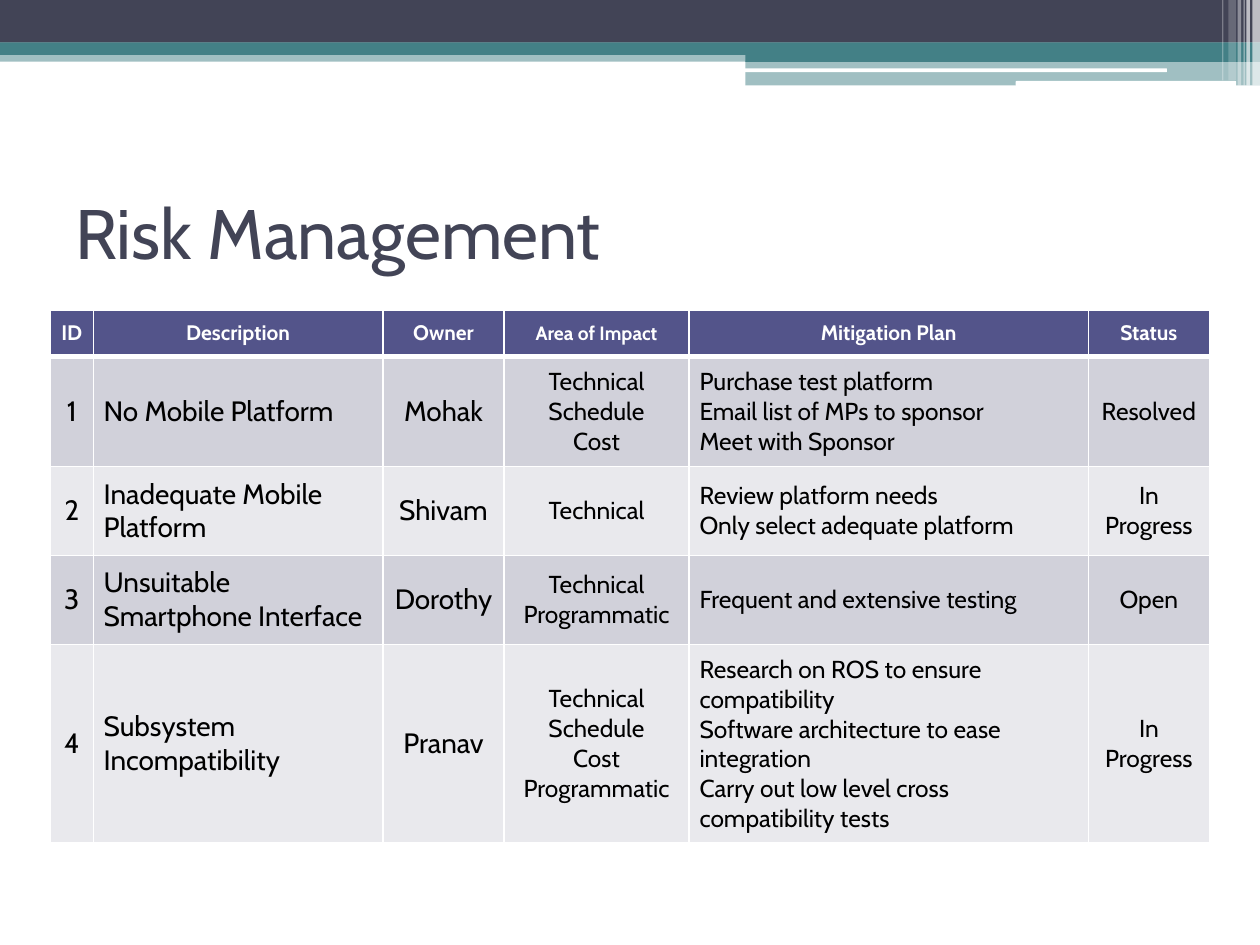
import dataclasses

import lxml.etree
import pptx
import pptx.dml.color
import pptx.enum.shapes
import pptx.enum.text
import pptx.oxml.ns
import pptx.util

Pt = pptx.util.Pt
SHAPE = pptx.enum.shapes.MSO_SHAPE
ALIGN = pptx.enum.text.PP_ALIGN
MIDDLE = pptx.enum.text.MSO_ANCHOR.MIDDLE
qn = pptx.oxml.ns.qn


@dataclasses.dataclass(frozen=True)
class Theme:
    font: str = "Cabin"
    navy: str = "424456"
    teal: str = "438086"
    white: str = "FFFFFF"
    black: str = "000000"
    header: str = "53548A"
    bands: tuple = ("D1D1DA", "E9E9ED")
    title_size: int = 40
    header_size: int = 12
    narrow_size: int = 11
    large_size: int = 16
    body_size: int = 14


def rgb(color):
    return pptx.dml.color.RGBColor.from_string(color)


def write(tf, text, *, font, size, color, bold=False, align=ALIGN.LEFT):
    tf.word_wrap = True
    tf.vertical_anchor = MIDDLE
    for i, line in enumerate(text.split("\n")):
        p = tf.paragraphs[0] if i == 0 else tf.add_paragraph()
        p.alignment = align
        r = p.add_run()
        r.text = line
        r.font.name = font
        r.font.size = Pt(size)
        r.font.bold = bold
        r.font.color.rgb = rgb(color)


class Deck:
    def __init__(self, slide, theme):
        self.s = slide
        self.theme = theme

    def bar(self, x, y, w, h, color, opacity=100, rounded=False):
        kind = SHAPE.ROUNDED_RECTANGLE if rounded else SHAPE.RECTANGLE
        sp = self.s.shapes.add_shape(kind, Pt(x), Pt(y), Pt(w), Pt(h))
        sp.shadow.inherit = False
        sp.line.fill.background()
        sp.fill.solid()
        sp.fill.fore_color.rgb = rgb(color)
        if opacity < 100:
            clr = sp.fill._xPr.find(qn("a:solidFill"))[0]
            lxml.etree.SubElement(clr, qn("a:alpha"), val=str(opacity * 1000))

    def title(self, text, x, y, w, h):
        sp = self.s.shapes.add_textbox(Pt(x), Pt(y), Pt(w), Pt(h))
        write(sp.text_frame, text, font=self.theme.font,
              size=self.theme.title_size, color=self.theme.navy)

    def border(self, cell, side, width):
        tag = qn(f"a:ln{side}")
        ln = lxml.etree.SubElement(cell._tc.get_or_add_tcPr(), tag, w=str(Pt(width)))
        fill = lxml.etree.SubElement(ln, qn("a:solidFill"))
        lxml.etree.SubElement(fill, qn("a:srgbClr"), val=self.theme.white)

    def cell(self, cell, text, fill, top, bottom, **fmt):
        for side, width in (("L", 1), ("R", 1), ("T", top), ("B", bottom)):
            self.border(cell, side, width)
        cell.fill.solid()
        cell.fill.fore_color.rgb = rgb(fill)
        cell.margin_left = cell.margin_right = Pt(6)
        cell.margin_top = cell.margin_bottom = Pt(6)
        cell.vertical_anchor = MIDDLE
        write(cell.text_frame, text, font=self.theme.font, **fmt)

    def table(self, x, y, widths, heights, header, rows):
        t = self.theme
        frame = self.s.shapes.add_table(len(heights), len(widths), Pt(x), Pt(y),
                                        Pt(sum(widths)), Pt(sum(heights)))
        table = frame.table
        for col, width in zip(table.columns, widths):
            col.width = Pt(width)
        for row, height in zip(table.rows, heights):
            row.height = Pt(height)
        for c, text in enumerate(header):
            size = t.narrow_size if text == "Area of Impact" else t.header_size
            self.cell(table.cell(0, c), text, t.header, 1, 3, size=size,
                      color=t.white, bold=True, align=ALIGN.CENTER)
        for r, row in enumerate(rows, 1):
            for c, text in enumerate(row):
                left = header[c] in ("Description", "Mitigation Plan")
                self.cell(table.cell(r, c), text, t.bands[(r - 1) % 2],
                          3 if r == 1 else 1, 1,
                          size=t.large_size if c < 3 else t.body_size,
                          color=t.black,
                          align=ALIGN.LEFT if left else ALIGN.CENTER)


HEADER = ("ID", "Description", "Owner", "Area of Impact", "Mitigation Plan", "Status")
RISKS = (
    ("1", "No Mobile Platform", "Mohak", "Technical Schedule\nCost",
     "Purchase test platform\nEmail list of MPs to sponsor\nMeet with Sponsor",
     "Resolved"),
    ("2", "Inadequate Mobile Platform", "Shivam", "Technical",
     "Review platform needs\nOnly select adequate platform", "In Progress"),
    ("3", "Unsuitable Smartphone Interface", "Dorothy", "Technical Programmatic",
     "Frequent and extensive testing", "Open"),
    ("4", "Subsystem Incompatibility", "Pranav",
     "Technical\nSchedule\nCost\nProgrammatic",
     "Research on ROS to ensure compatibility\n"
     "Software architecture to ease integration\n"
     "Carry out low level cross compatibility tests", "In Progress"),
)


def main():
    prs = pptx.Presentation()
    prs.slide_width, prs.slide_height = Pt(720), Pt(540)
    theme = Theme()
    deck = Deck(prs.slides.add_slide(prs.slide_layouts[6]), theme)

    deck.bar(0, 28.8, 720, 6.5, theme.teal, 50)
    deck.bar(0, 0, 720, 24.4, theme.navy)
    deck.bar(0, 24.2, 720, 7.2, theme.teal)
    deck.bar(426, 28.2, 294, 7.2, theme.teal)
    deck.bar(426, 34.6, 294, 14.2, theme.teal, 50)
    deck.bar(425.6, 39.1, 241.2, 2.2, theme.white, rounded=True)
    deck.bar(580.4, 46.3, 126, 2.9, theme.white, rounded=True)
    stripes = ((715.6, 4.4, 49, 65), (712.2, 2, 49, 65), (710.6, 0.7, 49, 60),
               (707.2, 2, 49, 40), (702, 4.3, 46, 20), (698.4, 0.7, 46, 30))
    for x, w, h, opacity in stripes:
        deck.bar(x, 0, w, h, theme.white, opacity)

    deck.title("Risk Management", 36, 90, 648, 84.2)
    deck.table(28.8, 177.2, (24.5, 165.6, 69.1, 105.8, 228.2, 69.1),
               (26.6, 62.8, 50.8, 50.8, 113.4), HEADER, RISKS)
    prs.save("out.pptx")


if __name__ == "__main__":
    main()
